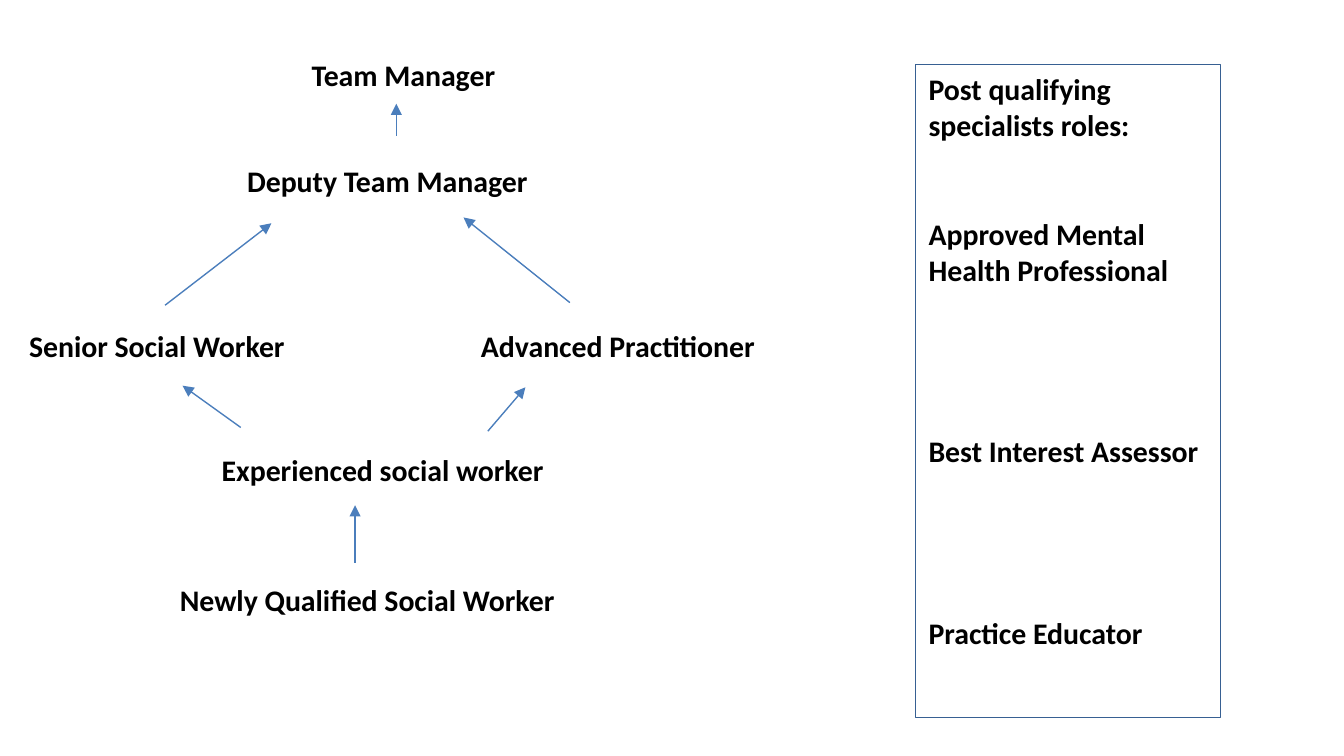
import pptx
import pptx.dml.color
import pptx.enum.shapes
import pptx.enum.text
import pptx.oxml
import pptx.oxml.ns
import pptx.util

Cm = pptx.util.Cm
Pt = pptx.util.Pt


def color(hex_value):
    return pptx.dml.color.RGBColor.from_string(hex_value)


def style_text(para):
    for span in para.runs:
        span.font.name = "Calibri"
        span.font.size = Pt(16)
        span.font.bold = True
        span.font.color.rgb = color("000000")


deck = pptx.Presentation()
deck.slide_width = Cm(25.4)
deck.slide_height = Cm(14.29)
page = deck.slides.add_slide(deck.slide_layouts[6])

# Career steps: text, left, top, width
steps = [
    ("Team Manager", 5.64, 0.94, 7.16),
    ("Deputy Team Manager", 4.42, 2.95, 6.65),
    ("Senior Social Worker", 0.3, 6.07, 5.61),
    ("Advanced Practitioner", 8.84, 6.07, 6.27),
    ("Experienced social worker", 3.94, 8.41, 7.65),
    ("Newly Qualified Social Worker", 3.15, 10.87, 10.19),
]
for text, left, top, width in steps:
    box = page.shapes.add_textbox(Cm(left), Cm(top), Cm(width), Cm(0.94))
    box.text_frame.word_wrap = True
    box.text_frame.text = text
    style_text(box.text_frame.paragraphs[0])

# Progression arrows: start x, start y, end x, end y
arrows = [
    (6.71, 10.64, 6.71, 9.55),
    (4.55, 8.08, 3.45, 7.29),
    (9.22, 8.15, 9.93, 7.32),
    (3.12, 5.77, 5.13, 4.22),
    (10.77, 5.72, 8.76, 4.11),
    (7.49, 2.57, 7.49, 1.96),
]
for ends in arrows:
    arrow = page.shapes.add_connector(
        pptx.enum.shapes.MSO_CONNECTOR.STRAIGHT, *[Cm(value) for value in ends]
    )
    arrow.line.color.rgb = color("4B7EBC")
    arrow.line.width = Pt(0.75)
    head = pptx.oxml.parse_xml(
        f'<a:tailEnd {pptx.oxml.ns.nsdecls("a")} type="triangle"/>'
    )
    arrow.line._get_or_add_ln().append(head)
    arrow._element.spPr.append(
        pptx.oxml.parse_xml(f'<a:effectLst {pptx.oxml.ns.nsdecls("a")}/>')
    )

# Specialist roles panel: text, space before in points
roles = [
    ("Post qualifying specialists roles:", 0),
    ("Approved Mental Health Professional", 39),
    ("Best Interest Assessor", 78),
    ("Practice Educator", 78),
]
panel = page.shapes.add_shape(
    pptx.enum.shapes.MSO_SHAPE.RECTANGLE, Cm(17.3), Cm(1.22), Cm(5.77), Cm(12.34)
)
panel.shadow.inherit = False
panel.fill.background()
panel.line.color.rgb = color("376092")
panel.line.width = Pt(0.75)
frame = panel.text_frame
frame.word_wrap = True
frame.vertical_anchor = pptx.enum.text.MSO_ANCHOR.TOP
frame.text = "\n".join(text for text, gap in roles)
for para, (text, gap) in zip(frame.paragraphs, roles):
    para.alignment = pptx.enum.text.PP_ALIGN.LEFT
    para.space_before = Pt(gap)
    style_text(para)

deck.save("out.pptx")
